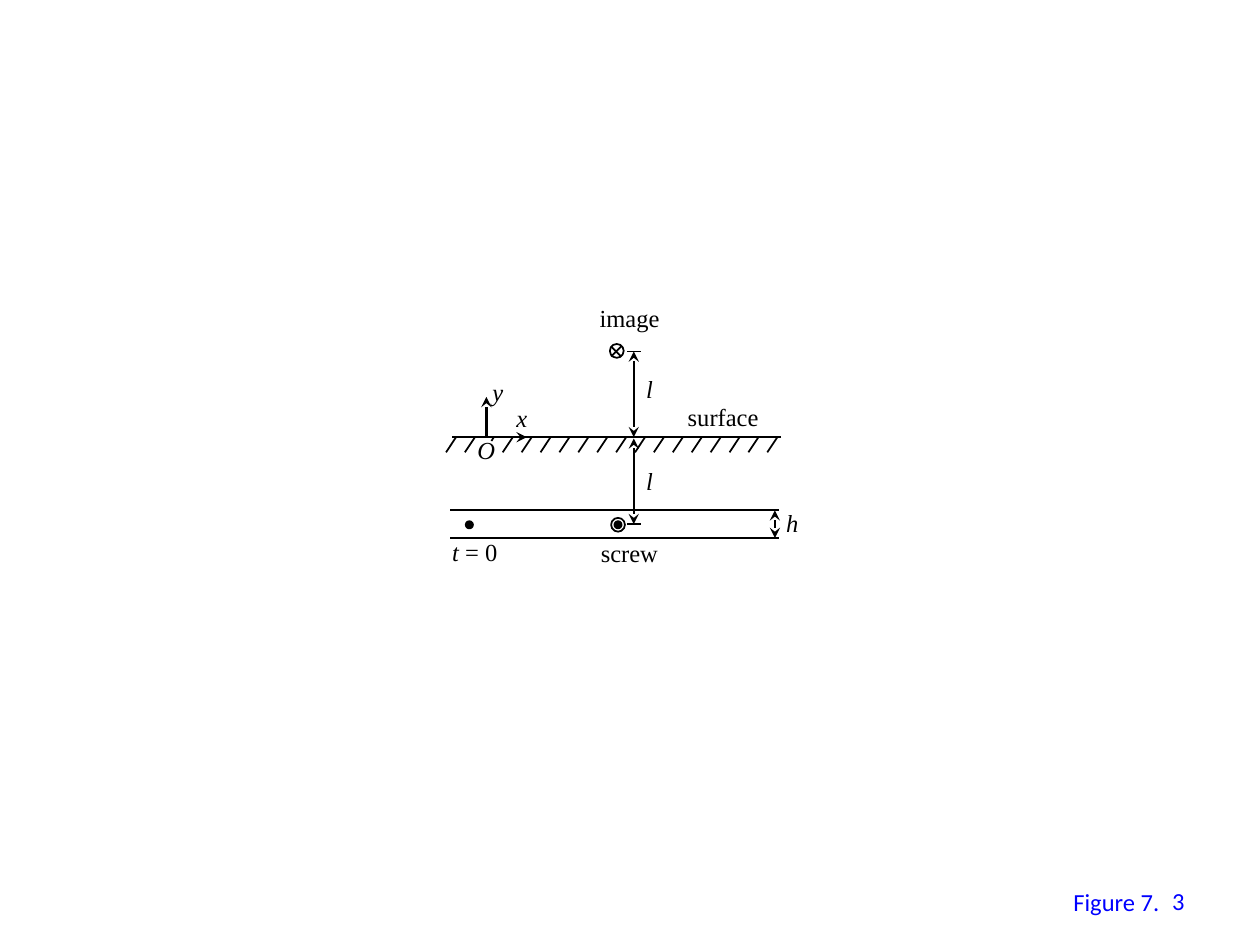
from dataclasses import dataclass

from lxml import etree
from pptx import Presentation
from pptx.dml.color import RGBColor
from pptx.enum import shapes, text
from pptx.oxml import ns
from pptx.util import Inches, Pt


@dataclass(frozen=True)
class Theme:
    ink: RGBColor = RGBColor(0, 0, 0)
    footer: RGBColor = RGBColor(0, 0, 255)
    label_font: str = "Times New Roman"
    footer_font: str = "Calibri"
    size: int = 14
    thin: float = 1
    thick: float = 1.5


@dataclass(frozen=True)
class Line:
    x1: float
    y1: float
    x2: float
    y2: float
    weight: float = 1
    head: bool = False
    tail: bool = False


@dataclass(frozen=True)
class Circle:
    left: float
    top: float
    diameter: float
    weight: float = 1
    filled: bool = False


@dataclass(frozen=True)
class Label:
    left: float
    top: float
    width: float
    runs: tuple[str, ...]
    italic: bool = False


THEME = Theme()
SURFACE_Y = 3.47
PLATE_TOP, PLATE_BOTTOM = 4.05, 4.27
IMAGE_Y, SCREW_Y = 2.79, 4.16
ORIGIN_X, DEPTH_X = 3.86, 5.03
HATCH_START, HATCH_STEP, HATCH_COUNT = 3.62, 0.15, 18
HATCH_RUN, HATCH_DROP = 0.08, 0.12
SHORT_HATCH, SHORT_SCALE = 2, 0.25

BOUNDARIES = [
    Line(6.18, PLATE_BOTTOM, 3.57, PLATE_BOTTOM),
    Line(6.18, PLATE_TOP, 3.57, PLATE_TOP),
    Line(6.2, SURFACE_Y, 3.59, SURFACE_Y),
]
ARROWS = [
    Line(ORIGIN_X, SURFACE_Y, 4.18, SURFACE_Y, THEME.thick, tail=True),
    Line(ORIGIN_X, SURFACE_Y, ORIGIN_X, 3.15, THEME.thick, tail=True),
    Line(DEPTH_X, IMAGE_Y, DEPTH_X, SURFACE_Y, head=True, tail=True),
    Line(DEPTH_X, 3.48, DEPTH_X, SCREW_Y, head=True, tail=True),
    Line(6.15, PLATE_TOP, 6.15, PLATE_BOTTOM, head=True, tail=True),
]
TICKS = [Line(4.98, y, 5.09, y) for y in (IMAGE_Y, SCREW_Y)]
SCREW_MARKS = [
    Circle(3.7, 4.14, 0.05, THEME.thick, filled=True),
    Circle(4.88, 4.14, 0.05, THEME.thick, filled=True),
    Circle(4.85, 4.11, 0.11),
]
IMAGE_CIRCLE = Circle(4.84, 2.73, 0.11)
IMAGE_CROSS = [Line(4.85, 2.75, 4.93, 2.83), Line(4.85, 2.83, 4.93, 2.75)]
LABELS = [
    Label(6.14, 3.98, 0.35, ("h",), True),
    Label(5.03, 3.65, 0.31, ("l",), True),
    Label(5.03, 2.92, 0.31, ("l",), True),
    Label(3.49, 4.21, 0.62, ("t", " = 0"), True),
    Label(4, 3.15, 0.34, ("x",), True),
    Label(3.81, 2.94, 0.34, ("y",), True),
    Label(3.69, 3.4, 0.4, ("O",), True),
    Label(4.67, 4.22, 0.66, ("screw",)),
    Label(4.66, 2.36, 0.68, ("image",)),
    Label(5.36, 3.14, 0.77, ("surface",)),
]


def hatch_lines() -> list[Line]:
    lines = []
    for index in range(HATCH_COUNT):
        x = HATCH_START + index * HATCH_STEP
        scale = SHORT_SCALE if index == SHORT_HATCH else 1
        lines.append(Line(x, SURFACE_Y, x - HATCH_RUN * scale, SURFACE_Y + HATCH_DROP * scale))
    return lines


def draw_line(container, line: Line) -> None:
    connector = container.add_connector(
        shapes.MSO_CONNECTOR.STRAIGHT,
        Inches(line.x1), Inches(line.y1), Inches(line.x2), Inches(line.y2),
    )
    connector.line.color.rgb = THEME.ink
    connector.line.width = Pt(line.weight)
    outline = connector.line._get_or_add_ln()
    for tag, wanted in (("a:headEnd", line.head), ("a:tailEnd", line.tail)):
        if wanted:
            etree.SubElement(outline, ns.qn(tag), type="stealth")
    etree.SubElement(connector._element.spPr, ns.qn("a:effectLst"))


def draw_circle(container, circle: Circle) -> None:
    shape = container.add_shape(
        shapes.MSO_SHAPE.OVAL,
        Inches(circle.left), Inches(circle.top), Inches(circle.diameter), Inches(circle.diameter),
    )
    shape.shadow.inherit = False
    if circle.filled:
        shape.fill.solid()
        shape.fill.fore_color.rgb = THEME.ink
    else:
        shape.fill.background()
    shape.line.color.rgb = THEME.ink
    shape.line.width = Pt(circle.weight)


def draw_label(container, label: Label, font: str = THEME.label_font,
               color: RGBColor = THEME.ink, height: float = 0.34):
    frame = container.add_textbox(
        Inches(label.left), Inches(label.top), Inches(label.width), Inches(height)
    ).text_frame
    frame.word_wrap = False
    paragraph = frame.paragraphs[0]
    for index, content in enumerate(label.runs):
        run = paragraph.add_run()
        run.text = content
        run.font.name = font
        run.font.size = Pt(THEME.size)
        run.font.color.rgb = color
        run.font.italic = label.italic and index == 0
    return frame


def main() -> None:
    presentation = Presentation()
    presentation.slide_width, presentation.slide_height = Inches(10), Inches(7.5)
    slide = presentation.slides.add_slide(presentation.slide_layouts[6])
    canvas = slide.shapes

    draw_label(canvas, Label(8.42, 6.99, 0.89, ("Figure 7.",)), THEME.footer_font, THEME.footer)
    for line in BOUNDARIES + hatch_lines() + ARROWS + TICKS:
        draw_line(canvas, line)
    for circle in SCREW_MARKS:
        draw_circle(canvas, circle)

    image_marker = canvas.add_group_shape().shapes
    draw_circle(image_marker, IMAGE_CIRCLE)
    for line in IMAGE_CROSS:
        draw_line(image_marker, line)

    for label in LABELS:
        draw_label(canvas, label)

    number = draw_label(canvas, Label(7.17, 6.95, 2.33, ("3",)),
                        THEME.footer_font, THEME.footer, 0.4)
    number.word_wrap = True
    number.vertical_anchor = text.MSO_ANCHOR.MIDDLE
    number.paragraphs[0].alignment = text.PP_ALIGN.RIGHT

    presentation.save("out.pptx")


if __name__ == "__main__":
    main()
